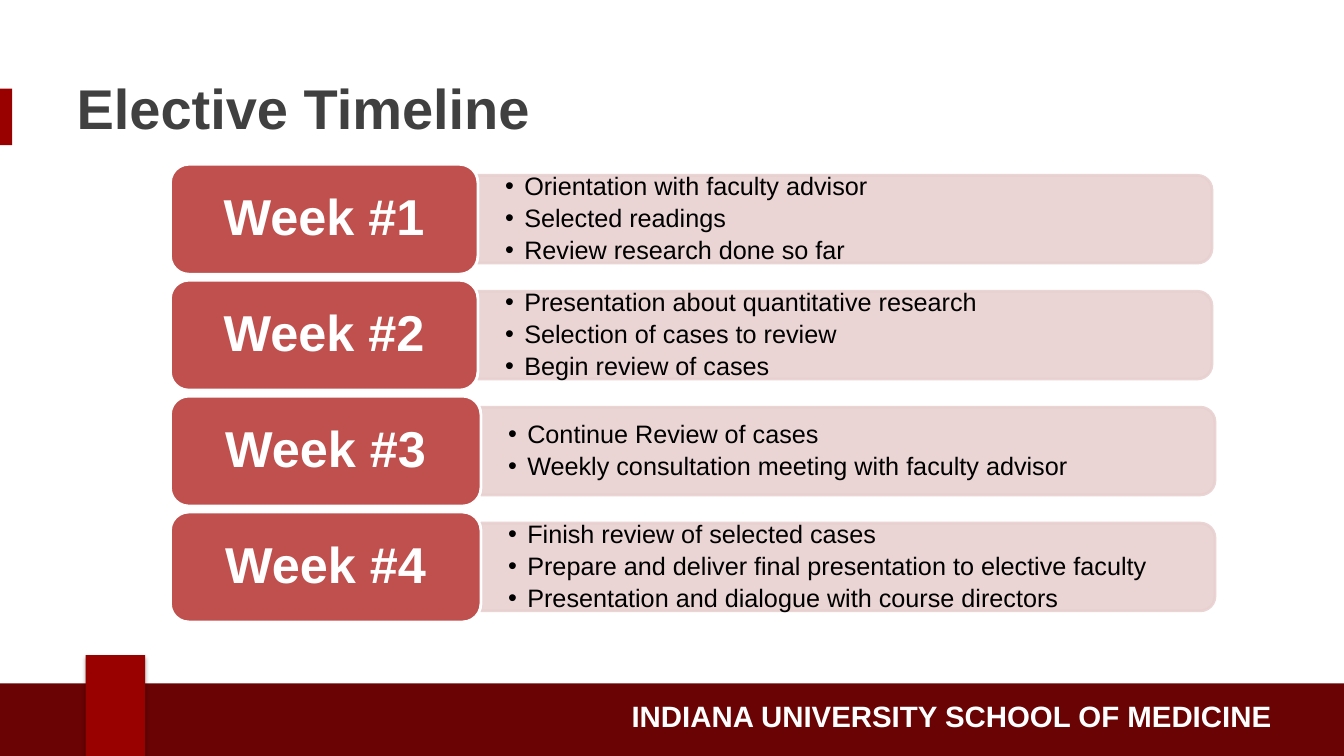
from lxml import etree
from pptx import Presentation
from pptx.dml.color import RGBColor
from pptx.enum.shapes import MSO_SHAPE
from pptx.enum.text import MSO_ANCHOR, PP_ALIGN
from pptx.oxml import parse_xml
from pptx.oxml.ns import nsdecls, qn
from pptx.util import Inches, Pt

RECT = MSO_SHAPE.RECTANGLE
ROUNDED = MSO_SHAPE.ROUNDED_RECTANGLE
TWO_ROUNDED = MSO_SHAPE.ROUND_2_SAME_RECTANGLE
TOP, MIDDLE = MSO_ANCHOR.TOP, MSO_ANCHOR.MIDDLE
LEFT, CENTER, RIGHT = PP_ALIGN.LEFT, PP_ALIGN.CENTER, PP_ALIGN.RIGHT

WEEKS = [
    (3.05, ["Orientation with faculty advisor", "Selected readings",
            "Review research done so far"]),
    (3.05, ["Presentation about quantitative research",
            "Selection of cases to review", "Begin review of cases"]),
    (3.08, ["Continue Review of cases",
            "Weekly consultation meeting with faculty advisor"]),
    (3.08, ["Finish review of selected cases",
            "Prepare and deliver final presentation to elective faculty",
            "Presentation and dialogue with course directors"]),
]
WEEK_LEFT, WEEK_TOP, WEEK_HEIGHT, WEEK_PITCH = 1.69, 1.63, 1.09, 1.15
PANEL_WIDTH, PANEL_HEIGHT, TASKS_HEIGHT = 7.28, 0.87, 0.79


def color(value):
    return RGBColor.from_string(value)


class TimelineSlide:
    font = "Arial"
    crimson, maroon = "990000", "690304"
    week_red, panel_pink = "C0504D", "E8D0D0"
    white, black, gray = "FFFFFF", "000000", "404041"

    def __init__(self, prs):
        self.slide = prs.slides.add_slide(prs.slide_layouts[6])

    def block(self, kind, left, top, width, height, fill, line=None):
        shape = self.slide.shapes.add_shape(
            kind, Inches(left), Inches(top), Inches(width), Inches(height))
        shape.shadow.inherit = False
        shape.fill.solid()
        shape.fill.fore_color.rgb = color(fill)
        if line:
            shape.line.color.rgb = color(line)
            shape.line.width = Pt(2)
        else:
            shape.line.fill.background()
        return shape

    def panel(self, left, middle):
        # Rotated a quarter turn so that the rounded corners face right
        shape = self.block(
            TWO_ROUNDED, left + (PANEL_WIDTH - PANEL_HEIGHT) / 2,
            middle - PANEL_WIDTH / 2, PANEL_HEIGHT, PANEL_WIDTH,
            self.panel_pink, self.panel_pink)
        shape.rotation = 90
        for rgb in shape.element.spPr.iter(qn("a:srgbClr")):
            etree.SubElement(rgb, qn("a:alpha"), val="90000")

    def soft_shadow(self, shape):
        effects = shape.element.spPr.find(qn("a:effectLst"))
        effects.append(parse_xml(
            f'<a:outerShdw {nsdecls("a")} blurRad="{Pt(3.1)}" dist="{Pt(1.8)}" '
            'dir="5400000" rotWithShape="0"><a:srgbClr val="000000">'
            '<a:alpha val="35000"/></a:srgbClr></a:outerShdw>'))

    def text_box(self, left, top, width, height):
        return self.slide.shapes.add_textbox(
            Inches(left), Inches(top), Inches(width), Inches(height))

    def set_text(self, shape, lines, size, ink, bold=False, align=LEFT,
                 anchor=MIDDLE, margins=(0.13, 0.07), spacing=1.0,
                 bullets=False):
        side, edge = map(Inches, margins)
        frame = shape.text_frame
        frame_format = {
            "word_wrap": True, "vertical_anchor": anchor,
            "margin_left": side, "margin_right": side,
            "margin_top": edge, "margin_bottom": edge}
        for name, value in frame_format.items():
            setattr(frame, name, value)
        frame.text = "\n".join(lines)
        font_format = {"name": self.font, "size": Pt(size), "bold": bold}
        for paragraph in frame.paragraphs:
            paragraph.alignment = align
            paragraph.line_spacing = spacing
            if paragraph.text != lines[-1]:
                paragraph.space_after = Pt(3.5)
            if bullets:
                self.bullet(paragraph)
            for run in paragraph.runs:
                for name, value in font_format.items():
                    setattr(run.font, name, value)
                run.font.color.rgb = color(ink)

    def bullet(self, paragraph):
        paragraph.level = 1
        props = paragraph._p.get_or_add_pPr()
        props.set("marL", str(Inches(0.19)))
        props.set("indent", str(-Inches(0.19)))
        bullet_color = etree.SubElement(props, qn("a:buClr"))
        etree.SubElement(bullet_color, qn("a:srgbClr"), val=self.black)
        etree.SubElement(props, qn("a:buFont"), typeface=self.font)
        etree.SubElement(props, qn("a:buChar"), char="•")

    def week(self, number, width, tasks):
        top = WEEK_TOP + (number - 1) * WEEK_PITCH
        middle = top + WEEK_HEIGHT / 2
        tasks_left = WEEK_LEFT + width
        self.panel(tasks_left, middle)
        task_list = self.text_box(
            tasks_left, middle - TASKS_HEIGHT / 2, 7.24, TASKS_HEIGHT)
        self.set_text(task_list, tasks, 18, self.black, margins=(0.27, 0.14),
                      spacing=0.9, bullets=True)
        label = self.block(ROUNDED, WEEK_LEFT, top, width, WEEK_HEIGHT,
                           self.week_red, self.white)
        self.set_text(label, [f"Week #{number}"], 36, self.white, bold=True,
                      align=CENTER, margins=(0.15, 0.07), spacing=0.9)


def main():
    prs = Presentation()
    prs.slide_width, prs.slide_height = Inches(13.33), Inches(7.5)
    page = TimelineSlide(prs)

    # Side accent and footer
    page.block(RECT, 0, 0.88, 0.12, 0.56, page.crimson)
    page.block(RECT, -0.04, 6.78, 13.46, 0.73, page.maroon)
    school = page.text_box(3.76, 6.86, 8.98, 0.49)
    page.set_text(school, ["INDIANA UNIVERSITY SCHOOL OF MEDICINE"], 21,
                  page.white, bold=True, align=RIGHT)
    footer_tab = page.block(RECT, 0.85, 6.5, 0.59, 1.01, page.crimson)
    page.soft_shadow(footer_tab)

    # Title
    title = page.text_box(0.63, 0.61, 11.67, 1.02)
    page.set_text(title, ["Elective Timeline"], 40, page.gray, bold=True,
                  anchor=TOP, margins=(0.13, 0.12))

    # Weekly rows
    for number, (width, tasks) in enumerate(WEEKS, start=1):
        page.week(number, width, tasks)

    prs.save("out.pptx")


if __name__ == "__main__":
    main()
